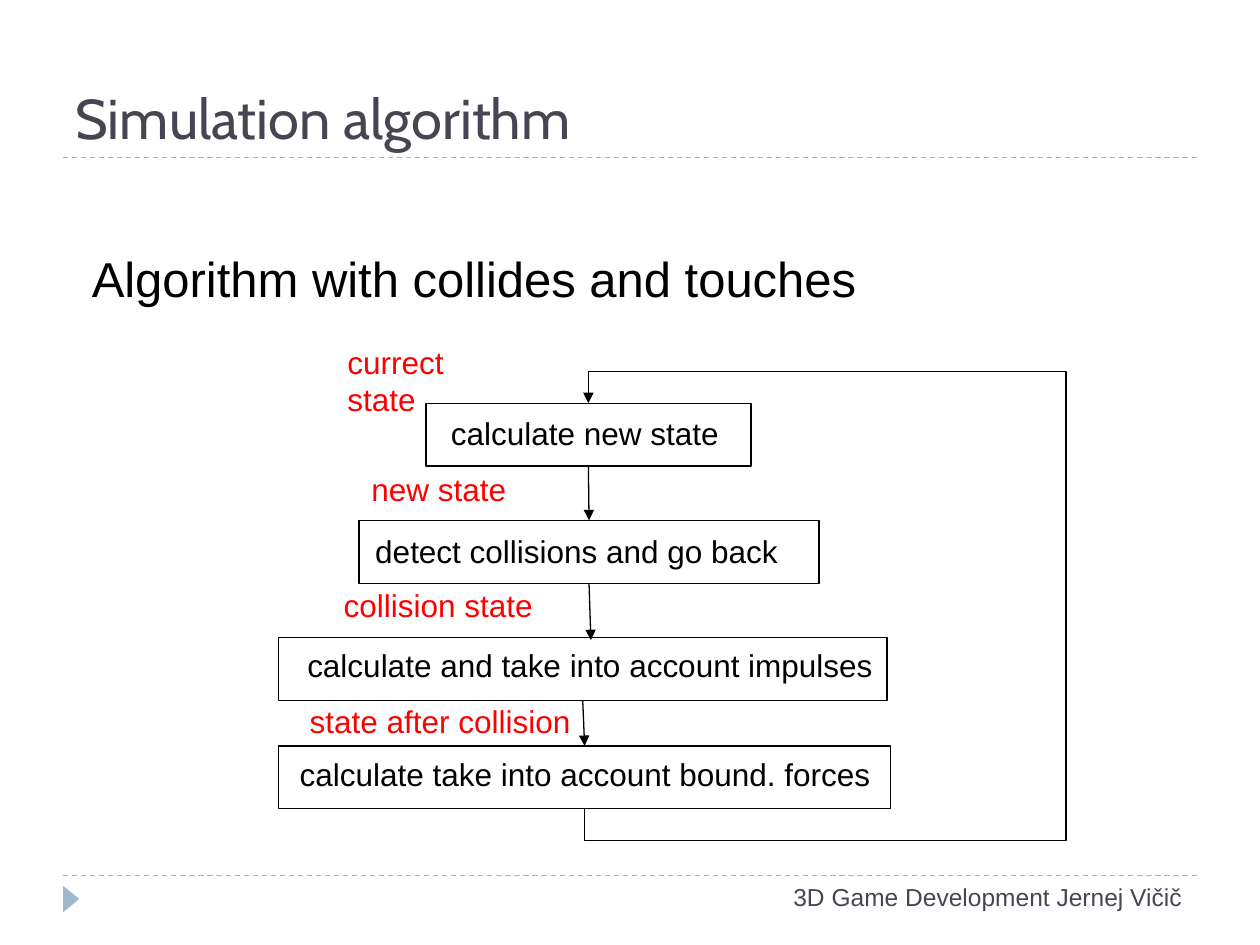
from lxml.etree import SubElement
from pptx import Presentation
from pptx.dml.color import RGBColor
from pptx.enum.dml import MSO_LINE
from pptx.enum.shapes import MSO_CONNECTOR, MSO_SHAPE
from pptx.enum.text import MSO_ANCHOR, PP_ALIGN
from pptx.oxml.ns import qn
from pptx.util import Inches, Pt

INK = {"text": "000000", "state": "FF0000", "title": "464653", "rule": "9FB8CD"}
COLS, ROWS = 40, 30


class Deck:
    """Draws styled elements on one slide, measured on a 40 by 30 grid."""

    def __init__(self):
        self.prs = Presentation()
        self.prs.slide_width, self.prs.slide_height = Inches(10), Inches(7.5)
        self.slide = self.prs.slides.add_slide(self.prs.slide_layouts[5])
        self.shapes = self.slide.shapes

    def place(self, x, y, w, h):
        col, row = self.prs.slide_width / COLS, self.prs.slide_height / ROWS
        return [round(v) for v in (x * col, y * row, w * col, h * row)]

    def fill(self, frame, words, size, ink, font="Arial", align=PP_ALIGN.LEFT):
        frame.text = words
        para = frame.paragraphs[0]
        para.alignment = align
        face = para.runs[0].font
        face.name, face.size = font, Pt(size)
        face.color.rgb = RGBColor.from_string(INK[ink])

    def title(self, words, *spot):
        head = self.shapes.title
        head.left, head.top, head.width, head.height = self.place(*spot)
        head.text_frame.vertical_anchor = MSO_ANCHOR.BOTTOM
        self.fill(head.text_frame, words, 32, "title", "Cabin")

    def text(self, words, spot, size=18, ink="text", wrap=True, align=PP_ALIGN.LEFT):
        frame = self.shapes.add_textbox(*self.place(*spot)).text_frame
        frame.word_wrap = wrap
        self.fill(frame, words, size, ink, align=align)

    def box(self, *spot):
        rect = self.shapes.add_shape(MSO_SHAPE.RECTANGLE, *self.place(*spot))
        rect.shadow.inherit = False
        rect.fill.background()
        rect.line.color.rgb = RGBColor.from_string(INK["text"])
        rect.line.width = Pt(0.75)
        return rect

    def mark(self, *spot):
        wedge = self.shapes.add_shape(MSO_SHAPE.ISOSCELES_TRIANGLE, *self.place(*spot))
        wedge.shadow.inherit = False
        wedge.rotation = 90
        wedge.fill.solid()
        wedge.fill.fore_color.rgb = RGBColor.from_string(INK["rule"])
        wedge.line.fill.background()

    def line(self, x, y, x2, y2, ink="text", kind=MSO_CONNECTOR.STRAIGHT):
        link = self.shapes.add_connector(kind, *self.place(x, y, x2, y2))
        link.line.color.rgb = RGBColor.from_string(INK[ink])
        link.line.width = Pt(0.75)
        SubElement(link._element.spPr, qn("a:effectLst"))
        return link

    def rule(self, y):
        self.line(2, y, 38, y, "rule").line.dash_style = MSO_LINE.DASH

    def arrow(self, *ends, **style):
        link = self.line(*ends, **style)
        SubElement(link._element.spPr.find(qn("a:ln")), qn("a:tailEnd"), type="triangle")
        return link

    def loop(self, x, y, x2, y2, side, gap):
        span, rise = y - y2, x2 - x
        left, top = (x + x2 - span) / 2, (y + y2 - rise) / 2
        link = self.arrow(left, top, left + span, top + rise, kind=MSO_CONNECTOR.ELBOW)
        props = link._element.spPr
        for key, val in (("rot", "5400000"), ("flipH", "1"), ("flipV", "1")):
            props.find(qn("a:xfrm")).set(key, val)
        geom = props.find(qn("a:prstGeom"))
        geom.set("prst", "bentConnector5")
        bends = geom.find(qn("a:avLst"))
        if bends is None:
            bends = SubElement(geom, qn("a:avLst"))
        shares = (-gap / span, (side - x) / rise, 1 + gap / span)
        for num, share in enumerate(shares, 1):
            SubElement(bends, qn("a:gd"), name=f"adj{num}", fmla=f"val {round(share * 100000)}")


def main():
    deck = Deck()
    deck.rule(27.8)
    deck.rule(5)
    deck.mark(1.84, 28.28, 0.84, 0.52)
    deck.text("Algorithm with collides and touches", (2.52, 7.68, 35.8, 2.24), 28)
    deck.title("Simulation algorithm", 2, 0.68, 36, 4.32)

    steps = [
        ("calculate new state", (13.92, 12.96, 11.44), (13.52, 12.8, 10.32)),
        ("detect collisions and go back", (11.52, 16.68, 14.8), (11.4, 16.52, 14.6)),
        ("calculate and take into account impulses", (9.36, 20.32, 20.04), (8.84, 20.24, 19.32)),
        ("calculate take into account bound. forces", (9.12, 23.76, 19.68), (8.84, 23.68, 19.44)),
    ]
    boxes = []
    for words, label, frame in steps:
        deck.text(words, (*label, 1.6))
        boxes.append(deck.box(*frame, 2))

    ends = [(18.68, 14.8, 18.68, 16.52), (18.68, 18.52, 18.76, 20.32), (18.52, 22.24, 18.56, 23.68)]
    for num, spot in enumerate(ends):
        link = deck.arrow(*spot)
        link.begin_connect(boxes[num], 2)
        if num != 1:
            link.end_connect(boxes[num + 1], 0)
    deck.loop(18.56, 25.68, 18.68, 12.8, 33.88, 1)

    states = [
        ("currect state", 10.64, 10.68, 6.28),
        ("new state", 11.4, 14.72, 5.08),
        ("collision state", 10.52, 18.4, 6.8),
        ("state after collision", 9.44, 22.08, 9.08),
    ]
    for words, x, y, w in states:
        deck.text(words, (x, y, w, 1.6), ink="state", wrap=False)
    deck.text("3D Game Development Jernej Vičič", (11.48, 27.8, 26.44, 1.6), 14, "title", align=PP_ALIGN.RIGHT)
    deck.prs.save("out.pptx")


if __name__ == "__main__":
    main()
